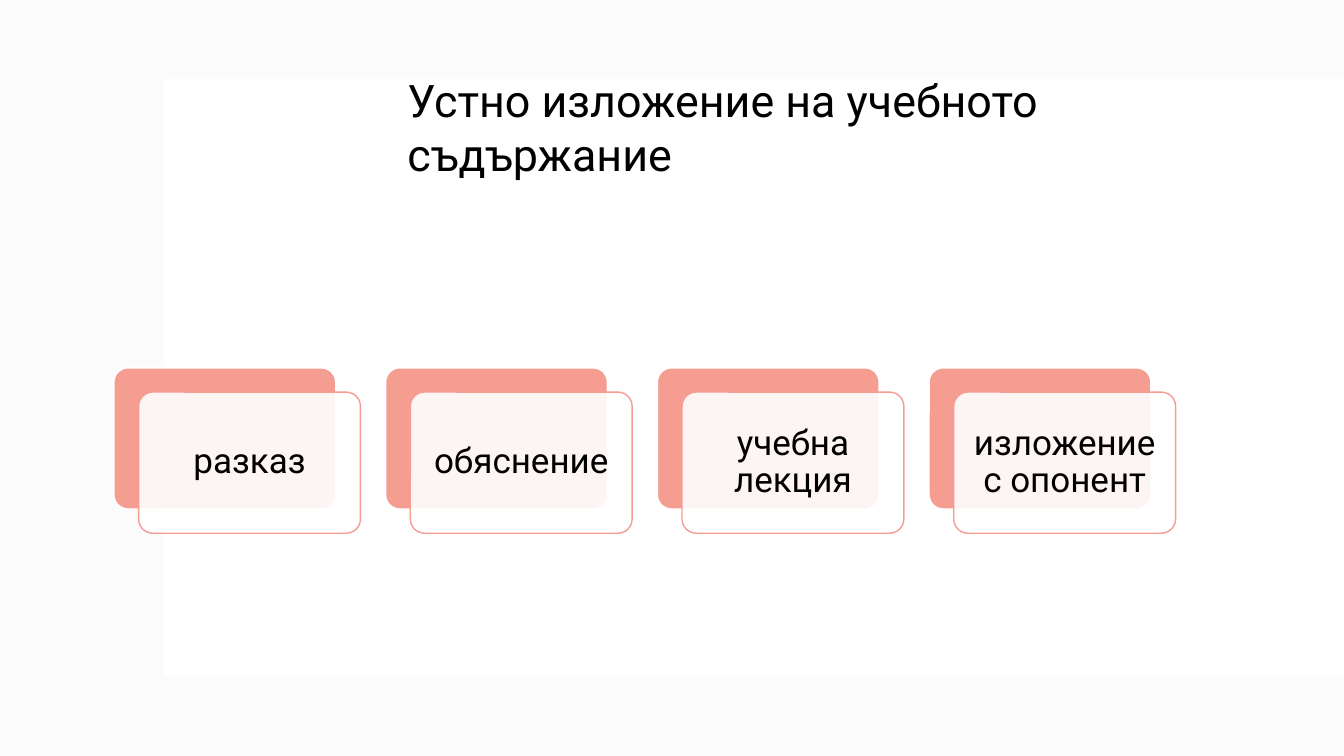
from pptx import Presentation
from pptx.dml.color import RGBColor
from pptx.enum.shapes import MSO_SHAPE
from pptx.enum.text import MSO_ANCHOR, MSO_AUTO_SIZE, PP_ALIGN
from pptx.oxml.ns import qn
from pptx.util import Inches, Pt
from lxml import etree

RECTANGLE = MSO_SHAPE.RECTANGLE
ROUNDED = MSO_SHAPE.ROUNDED_RECTANGLE
TOP, MIDDLE = MSO_ANCHOR.TOP, MSO_ANCHOR.MIDDLE
LEFT, CENTER = PP_ALIGN.LEFT, PP_ALIGN.CENTER
FIT_SHAPE = MSO_AUTO_SIZE.SHAPE_TO_FIT_TEXT

BLACK = RGBColor(0x00, 0x00, 0x00)
WHITE = RGBColor(0xFF, 0xFF, 0xFF)
GREY = RGBColor(0xF4, 0xF4, 0xF4)
CORAL = RGBColor(0xF4, 0x9D, 0x90)
FONT = "Roboto"

TITLE = "Устно изложение на учебното съдържание"
METHODS = ["разказ", "обяснение", "учебна лекция", "изложение с опонент"]

deck = Presentation()
deck.slide_width, deck.slide_height = Inches(13.33), Inches(7.5)
page = deck.slides.add_slide(deck.slide_layouts[5])


def add_box(kind, left, top, width, height, fill, line=None, opacity=100):
    box = page.shapes.add_shape(
        kind, Inches(left), Inches(top), Inches(width), Inches(height))
    box.shadow.inherit = False
    box.fill.solid()
    box.fill.fore_color.rgb = fill
    if opacity < 100:
        color = box.fill._xPr.find(qn("a:solidFill"))[0]
        etree.SubElement(color, qn("a:alpha")).set("val", str(opacity * 1000))
    if line is None:
        box.line.fill.background()
    else:
        box.line.color.rgb = line
        box.line.width = Pt(1)
    if kind == ROUNDED:
        box.adjustments[0] = 0.1
    return box


def add_text(para, text, size, align):
    para.alignment = align
    span = para.add_run()
    span.text = text
    span.font.name = FONT
    span.font.size = Pt(size)
    span.font.color.rgb = BLACK


# Backdrop: pale grey page with a white panel
add_box(RECTANGLE, 0, 0, 13.33, 7.5, GREY, opacity=35)
add_box(RECTANGLE, 1.62, 0.78, 11.71, 5.93, WHITE)

# Cards: coral plate behind, translucent labelled plate in front
for index, method in enumerate(METHODS):
    left = 1.13 + index * 2.695
    add_box(ROUNDED, left, 3.65, 2.2, 1.4, CORAL, WHITE)
    card = add_box(ROUNDED, left + 0.245, 3.89, 2.2, 1.4, WHITE, CORAL, 90)
    frame = card.text_frame
    frame.word_wrap = True
    frame.vertical_anchor = MIDDLE
    frame.margin_left = frame.margin_right = Inches(0.1)
    frame.margin_top = frame.margin_bottom = Inches(0.1)
    para = frame.paragraphs[0]
    para.line_spacing = 0.9
    add_text(para, method, 25, CENTER)

# Title, brought in front of the backdrop
title = page.shapes.title
title.left, title.top = Inches(3.94), Inches(0.67)
title.width, title.height = Inches(6.67), Inches(1.18)
title.text_frame.word_wrap = True
title.text_frame.auto_size = FIT_SHAPE
title.text_frame.vertical_anchor = TOP
add_text(title.text_frame.paragraphs[0], TITLE, 32, LEFT)
page.shapes._spTree.append(title._element)

deck.save("out.pptx")
